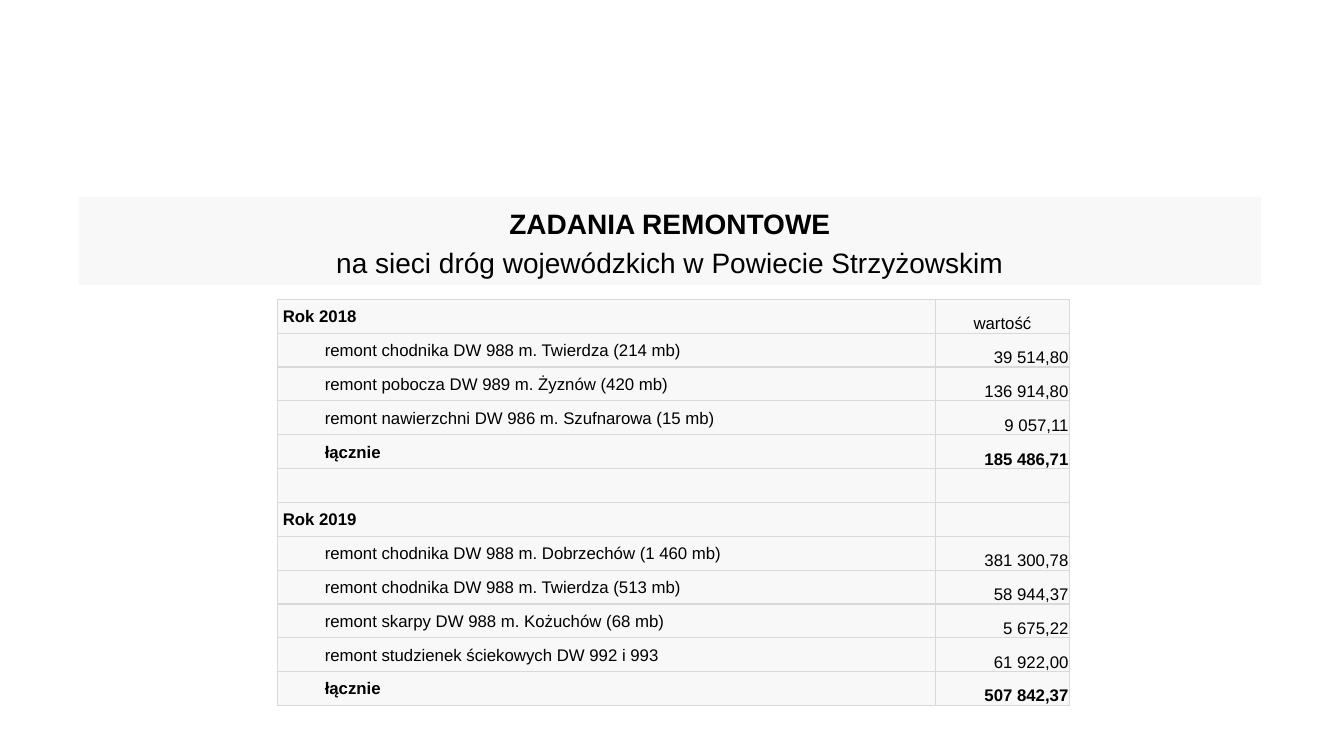
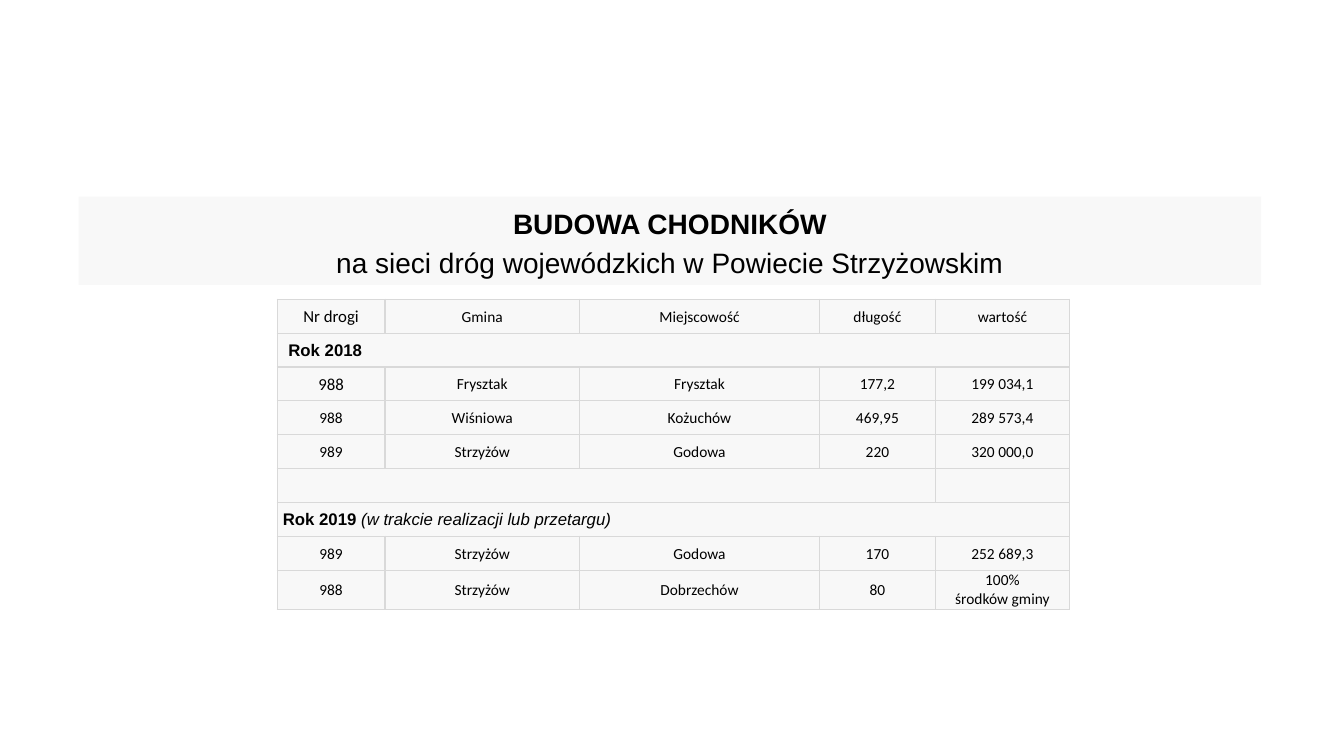
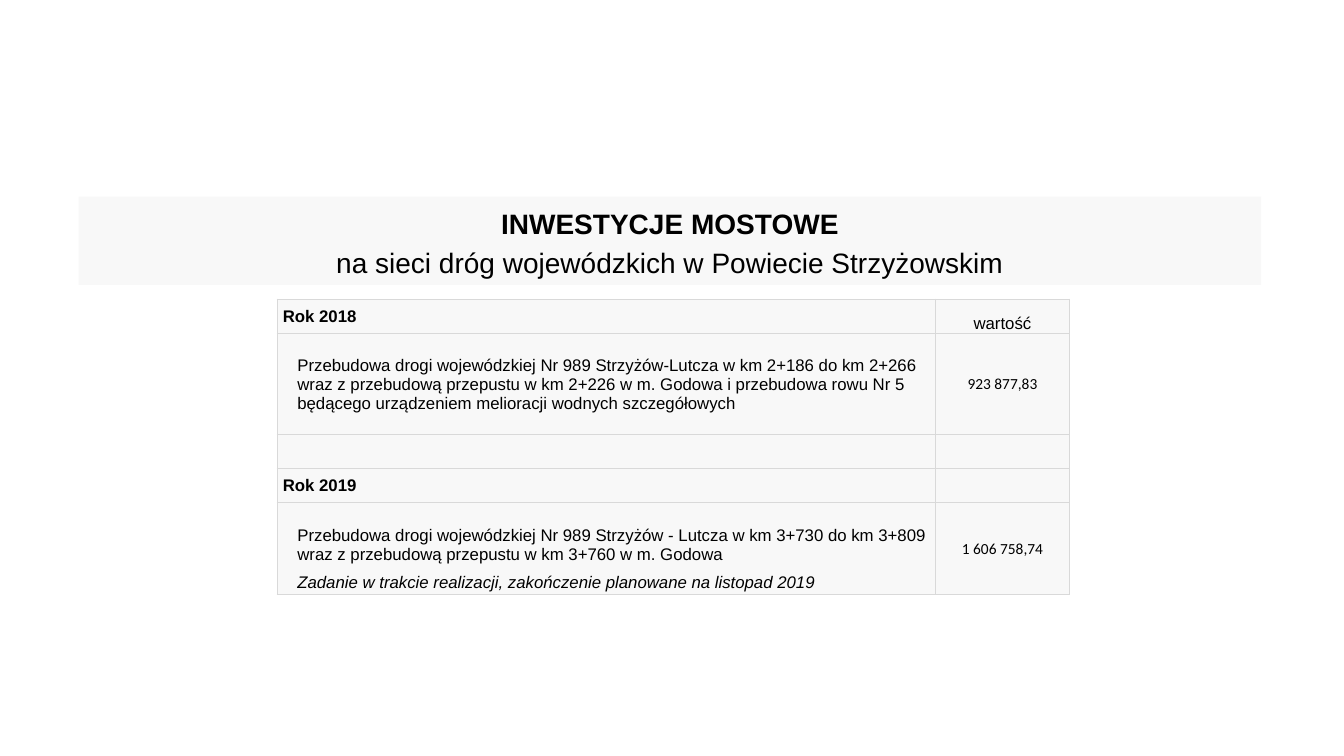
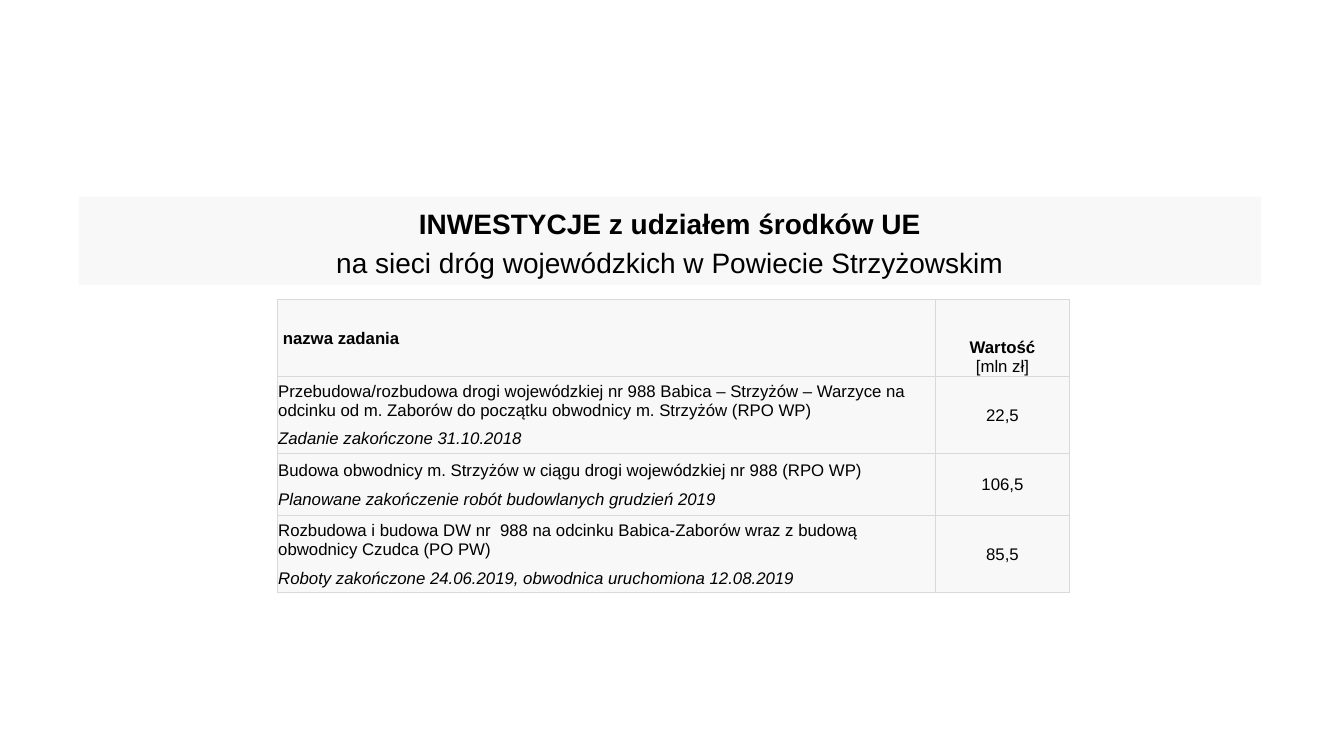
from dataclasses import dataclass

from lxml import etree
from pptx import Presentation
from pptx import util as u
from pptx.dml import color
from pptx.enum import shapes, text
from pptx.oxml import ns

Pt = u.Pt
LEFT, CENTER, RIGHT = text.PP_ALIGN.LEFT, text.PP_ALIGN.CENTER, text.PP_ALIGN.RIGHT
MIDDLE, BOTTOM = text.MSO_ANCHOR.MIDDLE, text.MSO_ANCHOR.BOTTOM


@dataclass(frozen=True)
class Theme:
    panel: str = "F8F8F8"
    border: str = "D9D9D9"
    ink: str = "000000"
    font: str = "Arial"
    number_font: str = "Calibri"
    title: float = 20
    body: float = 12
    small: float = 11
    inset: float = 0.72
    year_inset: float = 4
    task_inset: float = 34
    project_inset: float = 14.4
    note_gap: float = 7
    row: float = 24.2


T = Theme()
SUBTITLE = "na sieci dróg wojewódzkich w Powiecie Strzyżowskim"
TABLE_LEFT, TABLE_TOP = 198, 213.8
TASK_COLS = (470.2, 95.8)
ROAD_COLS = (77, 139, 171.4, 82.8, 95.8)


@dataclass
class Run:
    text: str
    bold: bool = False
    italic: bool = False


@dataclass
class Cell:
    lines: tuple = ()
    align: int = LEFT
    anchor: int = MIDDLE
    font: str = T.font
    size: float = T.body
    left: float = T.inset
    top: float = T.inset
    gap: float = 0
    span: int = 1


def year(label, note="", left=T.year_inset, span=1):
    runs = [Run(label, bold=True)]
    if note:
        runs.append(Run(" " + note, italic=True))
    return Cell((runs,), left=left, span=span)


def task(label, bold=False):
    return Cell(([Run(label, bold)],), left=T.task_inset)


def amount(value, bold=False):
    return Cell(([Run(value, bold)],), RIGHT, BOTTOM)


def value_header(*runs):
    return Cell(tuple([r] for r in runs or (Run("wartość"),)), CENTER, BOTTOM)


def project(label, note="", left=T.inset, top=T.inset):
    lines = [[Run(label)]]
    if note:
        lines.append([Run(note, italic=True)])
    return Cell(tuple(lines), left=left, top=top, gap=T.note_gap)


def centered(value, font=T.number_font, size=T.small):
    return Cell(tuple([Run(s)] for s in value.split("\n")), CENTER, font=font, size=size)


def road(*values, first_size=T.small):
    return [centered(v, size=T.small if i else first_size) for i, v in enumerate(values)]


def rgb(value):
    return color.RGBColor.from_string(value)


def format_run(r, font, size, bold, italic=False):
    r.font.name = font
    r.font.size = Pt(size)
    r.font.bold = bold
    r.font.italic = italic
    r.font.color.rgb = rgb(T.ink)


def add_title(slide, heading):
    sp = slide.shapes.add_shape(
        shapes.MSO_SHAPE.RECTANGLE, Pt(56.2), Pt(140.4), Pt(844.6), Pt(63.2))
    sp.shadow.inherit = False
    sp.fill.solid()
    sp.fill.fore_color.rgb = rgb(T.panel)
    sp.line.fill.background()
    tf = sp.text_frame
    tf.word_wrap = True
    tf.vertical_anchor = text.MSO_ANCHOR.TOP
    tf.text = heading + "\v" + SUBTITLE
    p = tf.paragraphs[0]
    p.alignment = CENTER
    p.line_spacing = 1.15
    p.space_after = Pt(10)
    for r, bold in zip(p.runs, (True, False)):
        format_run(r, T.font, T.title, bold)


def set_borders(cell):
    tc_pr = cell._tc.get_or_add_tcPr()
    for i, side in enumerate(("lnL", "lnR", "lnT", "lnB")):
        ln = etree.Element(ns.qn("a:" + side), w=str(Pt(1)))
        fill = etree.SubElement(ln, ns.qn("a:solidFill"))
        etree.SubElement(fill, ns.qn("a:srgbClr"), val=T.border)
        tc_pr.insert(i, ln)


def style_cell(cell):
    cell.fill.solid()
    cell.fill.fore_color.rgb = rgb(T.panel)
    set_borders(cell)
    cell.margin_left = cell.margin_right = cell.margin_top = Pt(T.inset)
    cell.margin_bottom = 0


def fill_cell(cell, content):
    cell.margin_left = Pt(content.left)
    cell.margin_top = Pt(content.top)
    cell.vertical_anchor = content.anchor
    tf = cell.text_frame
    for i, runs in enumerate(content.lines):
        p = tf.add_paragraph() if i else tf.paragraphs[0]
        p.alignment = content.align
        if i and content.gap:
            p.space_before = Pt(content.gap)
        for run in runs:
            r = p.add_run()
            r.text = run.text
            format_run(r, content.font, content.size, run.bold, run.italic)


def add_grid(slide, cols, rows, heights):
    frame = slide.shapes.add_table(
        len(rows), len(cols), Pt(TABLE_LEFT), Pt(TABLE_TOP), Pt(sum(cols)), Pt(sum(heights)))
    table = frame.table
    table.first_row = table.horz_banding = False
    for column, width in zip(table.columns, cols):
        column.width = Pt(width)
    for row, height in zip(table.rows, heights):
        row.height = Pt(height)
    for cell in table.iter_cells():
        style_cell(cell)
    for i, row in enumerate(rows):
        j = 0
        for content in row:
            cell = table.cell(i, j)
            if content.span > 1:
                cell.merge(table.cell(i, j + content.span - 1))
            fill_cell(cell, content)
            j += content.span


def add_slide(prs, heading, cols, rows, heights):
    slide = prs.slides.add_slide(prs.slide_layouts[6])
    add_title(slide, heading)
    add_grid(slide, cols, rows, heights)


def task_rows(tasks, total):
    rows = [[task(label), amount(value)] for label, value in tasks]
    return rows + [[task("łącznie", True), amount(total, True)]]


def repairs(prs):
    rows = [
        [year("Rok 2018"), value_header()],
        *task_rows([
            ("remont chodnika DW 988 m. Twierdza (214 mb)", "39 514,80"),
            ("remont pobocza DW 989 m. Żyznów (420 mb)", "136 914,80"),
            ("remont nawierzchni DW 986 m. Szufnarowa (15 mb)", "9 057,11"),
        ], "185 486,71"),
        [Cell(), Cell()],
        [year("Rok 2019"), Cell()],
        *task_rows([
            ("remont chodnika DW 988 m. Dobrzechów (1 460 mb)", "381 300,78"),
            ("remont chodnika DW 988 m. Twierdza (513 mb)", "58 944,37"),
            ("remont skarpy DW 988 m. Kożuchów (68 mb)", "5 675,22"),
            ("remont studzienek ściekowych DW 992 i 993", "61 922,00"),
        ], "507 842,37"),
    ]
    add_slide(prs, "ZADANIA REMONTOWE", TASK_COLS, rows, [T.row] * len(rows))


def pavements(prs):
    rows = [
        road("Nr drogi", "Gmina", "Miejscowość", "długość", "wartość", first_size=T.body),
        [year("Rok 2018", left=8, span=5)],
        road("988", "Frysztak", "Frysztak", "177,2", "199 034,1", first_size=T.body),
        road("988", "Wiśniowa", "Kożuchów", "469,95", "289 573,4"),
        road("989", "Strzyżów", "Godowa", "220", "320 000,0"),
        [Cell(span=4), Cell()],
        [year("Rok 2019", "(w trakcie realizacji lub przetargu)", span=5)],
        road("989", "Strzyżów", "Godowa", "170", "252 689,3"),
        road("988", "Strzyżów", "Dobrzechów", "80", "100%\nśrodków gminy"),
    ]
    heights = [T.row] * (len(rows) - 1) + [26.8]
    add_slide(prs, "BUDOWA CHODNIKÓW", ROAD_COLS, rows, heights)


def bridges(prs):
    rows = [
        [year("Rok 2018"), value_header()],
        [project("Przebudowa drogi wojewódzkiej Nr 989 Strzyżów-Lutcza w km 2+186 do km 2+266 "
                 "wraz z przebudową przepustu w km 2+226 w m. Godowa i przebudowa rowu Nr 5 "
                 "będącego urządzeniem melioracji wodnych szczegółowych",
                 left=T.project_inset),
         centered("923 877,83")],
        [Cell(), Cell()],
        [year("Rok 2019"), Cell()],
        [project("Przebudowa drogi wojewódzkiej Nr 989 Strzyżów - Lutcza w km 3+730 do km 3+809 "
                 "wraz z przebudową przepustu w km 3+760 w m. Godowa",
                 "Zadanie w trakcie realizacji, zakończenie planowane na listopad 2019",
                 left=T.project_inset, top=15),
         centered("1 606 758,74")],
    ]
    heights = [T.row, 3 * T.row, T.row, T.row, 66]
    add_slide(prs, "INWESTYCJE MOSTOWE", TASK_COLS, rows, heights)


def eu_projects(prs):
    projects = [
        ("Przebudowa/rozbudowa drogi wojewódzkiej nr 988 Babica – Strzyżów – Warzyce na "
         "odcinku od m. Zaborów do początku obwodnicy m. Strzyżów (RPO WP)",
         "Zadanie zakończone 31.10.2018", "22,5"),
        ("Budowa obwodnicy m. Strzyżów w ciągu drogi wojewódzkiej nr 988 (RPO WP)",
         "Planowane zakończenie robót budowlanych grudzień 2019", "106,5"),
        ("Rozbudowa i budowa DW nr  988 na odcinku Babica-Zaborów wraz z budową "
         "obwodnicy Czudca (PO PW)",
         "Roboty zakończone 24.06.2019, obwodnica uruchomiona 12.08.2019", "85,5"),
    ]
    rows = [[year("nazwa zadania"), value_header(Run("Wartość", True), Run("[mln zł]"))]]
    rows += [[project(label, note), centered(value, T.font, T.body)]
             for label, note, value in projects]
    add_slide(prs, "INWESTYCJE z udziałem środków UE", TASK_COLS, rows, [55, 55, 44.6, 55])


def main():
    prs = Presentation()
    prs.slide_width, prs.slide_height = Pt(960), Pt(540)
    repairs(prs)
    pavements(prs)
    bridges(prs)
    eu_projects(prs)
    prs.save("out.pptx")


if __name__ == "__main__":
    main()
